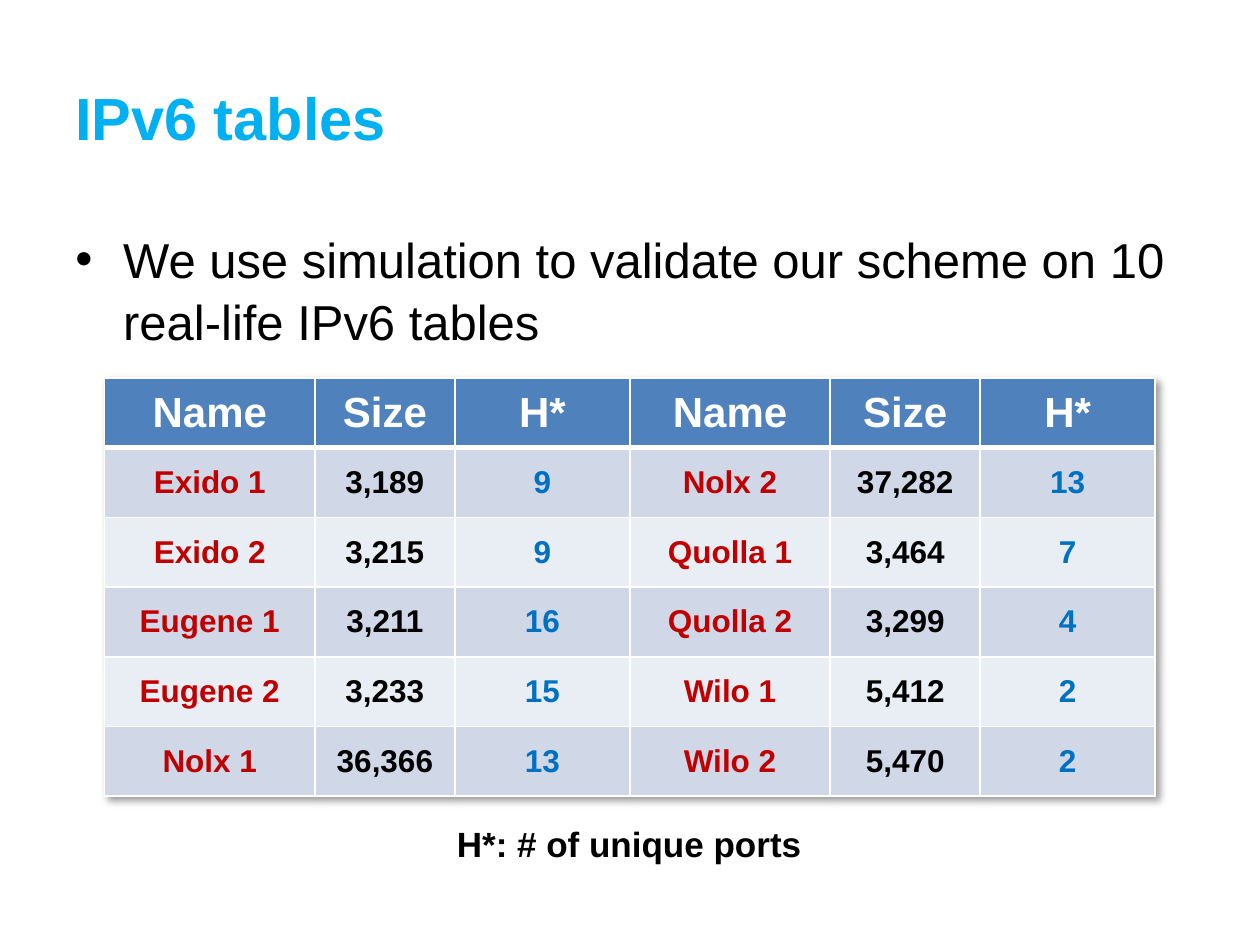
from lxml import etree
from pptx import Presentation
from pptx.dml.color import RGBColor
from pptx.enum.text import MSO_ANCHOR, PP_ALIGN
from pptx.oxml.ns import qn
from pptx.util import Inches, Pt

MIDDLE, TOP = MSO_ANCHOR.MIDDLE, MSO_ANCHOR.TOP
LEFT, CENTER = PP_ALIGN.LEFT, PP_ALIGN.CENTER
FONT = "Arial"
COLORS = {
    "title": "00B0F0", "text": "000000", "white": "FFFFFF", "header": "4F81BD",
    "odd": "D0D8E8", "even": "E9EDF4", "name": "C00000", "ports": "0070C0",
}
HEADINGS = ["Name", "Size", "H*"] * 2
ROWS = [
    ["Exido 1", "3,189", "9", "Nolx 2", "37,282", "13"],
    ["Exido 2", "3,215", "9", "Quolla 1", "3,464", "7"],
    ["Eugene 1", "3,211", "16", "Quolla 2", "3,299", "4"],
    ["Eugene 2", "3,233", "15", "Wilo 1", "5,412", "2"],
    ["Nolx 1", "36,366", "13", "Wilo 2", "5,470", "2"],
]
COLUMN_COLORS = ["name", "text", "ports"] * 2
COLUMN_WIDTHS = [1.67, 1.11, 1.39, 1.59, 1.19, 1.39]


def style_paragraph(para, text, size, color, bold=True, align=CENTER):
    """Fill a paragraph and set its font and alignment."""
    para.text = text
    para.alignment = align
    para.font.name = FONT
    para.font.size = Pt(size)
    para.font.bold = bold
    para.font.color.rgb = RGBColor.from_string(COLORS[color])


def add_text(page, area, text, size, color, bold=True, align=LEFT, anchor=TOP):
    """Add a wrapped one-paragraph text box and return its paragraph."""
    box = page.shapes.add_textbox(*map(Inches, area))
    frame = box.text_frame
    frame.word_wrap = True
    frame.vertical_anchor = anchor
    para = frame.paragraphs[0]
    style_paragraph(para, text, size, color, bold, align)
    return para


def add_bullet(page, area, text):
    """Add a bulleted statement with a hanging indent."""
    para = add_text(page, area, text, 28, "text", bold=False)
    para.line_spacing = 1.05
    properties = para._p.get_or_add_pPr()
    properties.set("marL", str(Inches(0.38)))
    properties.set("indent", str(-Inches(0.38)))
    etree.SubElement(properties, qn("a:buFont"), typeface=FONT)
    bullet = etree.SubElement(properties, qn("a:buChar"), char="•")
    properties.find(qn("a:defRPr")).addprevious(bullet.getprevious())
    properties.find(qn("a:defRPr")).addprevious(bullet)


def set_borders(cell, widths):
    """Draw white cell borders, with widths in points by side."""
    properties = cell._tc.get_or_add_tcPr()
    for index, (side, width) in enumerate(widths.items()):
        line = etree.Element(qn(f"a:ln{side}"), w=str(Pt(width)))
        fill = etree.SubElement(line, qn("a:solidFill"))
        etree.SubElement(fill, qn("a:srgbClr"), val=COLORS["white"])
        properties.insert(index, line)


def add_shadow(table):
    """Give the table a soft shadow to the lower right."""
    effects = etree.Element(qn("a:effectLst"))
    shadow = etree.SubElement(
        effects, qn("a:outerShdw"), blurRad=str(Pt(4)), dist=str(Pt(3)),
        dir="2700000", algn="tl", rotWithShape="0")
    color = etree.SubElement(shadow, qn("a:srgbClr"), val=COLORS["text"])
    etree.SubElement(color, qn("a:alpha"), val="40000")
    table._tbl.tblPr.insert(0, effects)


def add_results_table(page, area):
    """Add the table of routing table names, sizes and port counts."""
    grid = [HEADINGS] + ROWS
    frame = page.shapes.add_table(len(grid), len(HEADINGS), *map(Inches, area))
    table = frame.table
    add_shadow(table)
    for column, width in zip(table.columns, COLUMN_WIDTHS):
        column.width = Inches(width)
    for row, values in enumerate(grid):
        is_header = row == 0
        fill = "header" if is_header else "odd" if row % 2 else "even"
        top, bottom = {0: (1, 3), 1: (3, 1)}.get(row, (1, 1))
        for column, value in enumerate(values):
            cell = table.cell(row, column)
            cell.vertical_anchor = MIDDLE
            cell.fill.solid()
            cell.fill.fore_color.rgb = RGBColor.from_string(COLORS[fill])
            set_borders(cell, {"L": 1, "R": 1, "T": top, "B": bottom})
            color = "white" if is_header else COLUMN_COLORS[column]
            style_paragraph(cell.text_frame.paragraphs[0], value,
                            24 if is_header else 18, color)


def build_page(deck):
    """Build the slide on IPv6 tables."""
    page = deck.slides.add_slide(deck.slide_layouts[6])
    add_text(page, (0.5, 0.3, 9, 1.25), "IPv6 tables", 34, "title", anchor=MIDDLE)
    add_bullet(page, (0.5, 1.75, 9, 1.08),
               "We use simulation to validate our scheme on 10 real-life IPv6 tables")
    add_results_table(page, (0.83, 3, 8.33, 3.32))
    add_text(page, (2.08, 6.48, 5.83, 0.44), "H*: # of unique ports", 20, "text",
             align=CENTER)


def main():
    """Create the deck and save it."""
    deck = Presentation()
    deck.slide_width, deck.slide_height = Inches(10), Inches(7.5)
    build_page(deck)
    deck.save("out.pptx")


if __name__ == "__main__":
    main()
